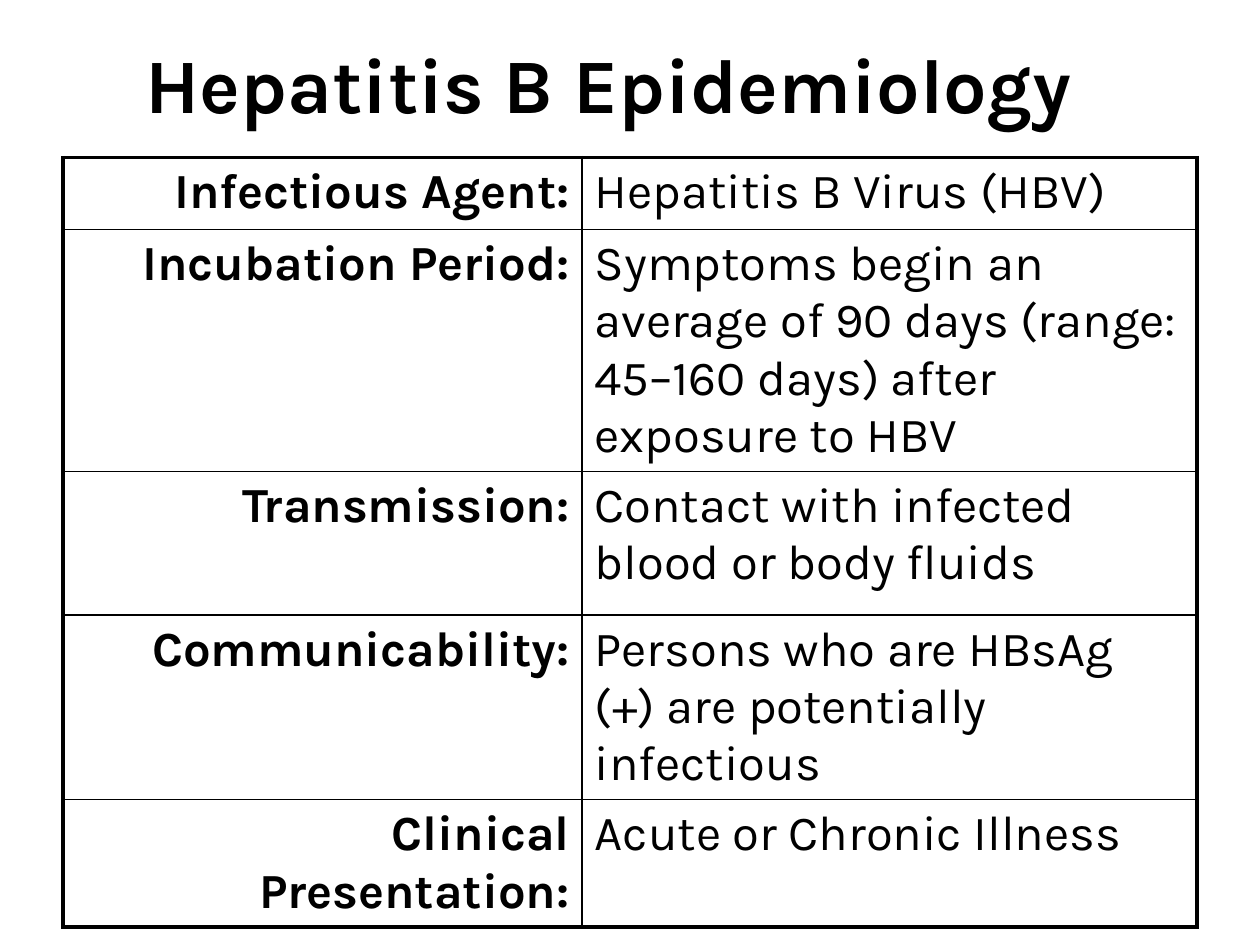
from lxml.etree import SubElement
from pptx import Presentation
from pptx.dml.color import RGBColor
from pptx.enum.text import MSO_ANCHOR, PP_ALIGN
from pptx.oxml.ns import qn
from pptx.util import Inches, Pt

COLORS = {"text": "000000", "border": "000000", "background": "FFFFFF"}
FONT = "Karla"
THICK, THIN = 2.25, 1

COLUMN_WIDTHS = [4.12, 4.88]
ROW_HEIGHTS = [0.57, 1.5, 1.14, 1.14, 0.74]
FACTS = [
    ("Infectious Agent:", "Hepatitis B Virus (HBV)"),
    ("Incubation Period:",
     "Symptoms begin an average of 90 days (range: 45–160 days) after exposure to HBV"),
    ("Transmission:", "Contact with infected blood or body fluids"),
    ("Communicability:", "Persons who are HBsAg (+) are potentially infectious"),
    ("Clinical Presentation:", "Acute or Chronic Illness"),
]


def write(text_frame, text, size, bold, alignment):
    paragraph = text_frame.paragraphs[0]
    paragraph.alignment = alignment
    paragraph.space_before = Pt(0)
    run = paragraph.add_run()
    run.text = text
    run.font.name = FONT
    run.font.size = Pt(size)
    run.font.bold = bold
    run.font.color.rgb = RGBColor.from_string(COLORS["text"])


def set_borders(cell, widths):
    """Draw the left, right, top and bottom borders; they precede the fill."""
    properties = cell._tc.get_or_add_tcPr()
    for position, (side, width) in enumerate(zip("LRTB", widths)):
        line = SubElement(properties, qn(f"a:ln{side}"), w=str(Pt(width)))
        fill = SubElement(line, qn("a:solidFill"))
        SubElement(fill, qn("a:srgbClr"), val=COLORS["border"])
        properties.insert(position, line)


def add_title(slide, text):
    title = slide.shapes.title
    title.left, title.top = Inches(0), Inches(0.12)
    title.width, title.height = Inches(9.67), Inches(1.08)
    title.text_frame.vertical_anchor = MSO_ANCHOR.MIDDLE
    write(title.text_frame, text, 44, True, PP_ALIGN.CENTER)


def add_fact_table(slide):
    last_row, last_column = len(FACTS) - 1, len(COLUMN_WIDTHS) - 1
    table = slide.shapes.add_table(
        len(FACTS), len(COLUMN_WIDTHS), Inches(0.5), Inches(1.25),
        Inches(sum(COLUMN_WIDTHS)), Inches(sum(ROW_HEIGHTS))).table
    table.first_row = table.horz_banding = False
    for column, width in zip(table.columns, COLUMN_WIDTHS):
        column.width = Inches(width)
    for row, height in zip(table.rows, ROW_HEIGHTS):
        row.height = Inches(height)

    for row, fact in enumerate(FACTS):
        for column, text in enumerate(fact):
            cell = table.cell(row, column)
            cell.fill.background()
            is_label = column == 0
            write(cell.text_frame, text, 28, is_label,
                  PP_ALIGN.RIGHT if is_label else PP_ALIGN.LEFT)
            # Thick frame outside, thin lines inside
            outer_sides = (column == 0, column == last_column, row == 0, row == last_row)
            set_borders(cell, [THICK if outer else THIN for outer in outer_sides])


def main():
    presentation = Presentation()
    presentation.slide_width, presentation.slide_height = Inches(10), Inches(7.5)
    slide = presentation.slides.add_slide(presentation.slide_layouts[5])
    slide.background.fill.solid()
    slide.background.fill.fore_color.rgb = RGBColor.from_string(COLORS["background"])
    add_title(slide, "Hepatitis B Epidemiology")
    add_fact_table(slide)
    presentation.save("out.pptx")


if __name__ == "__main__":
    main()
